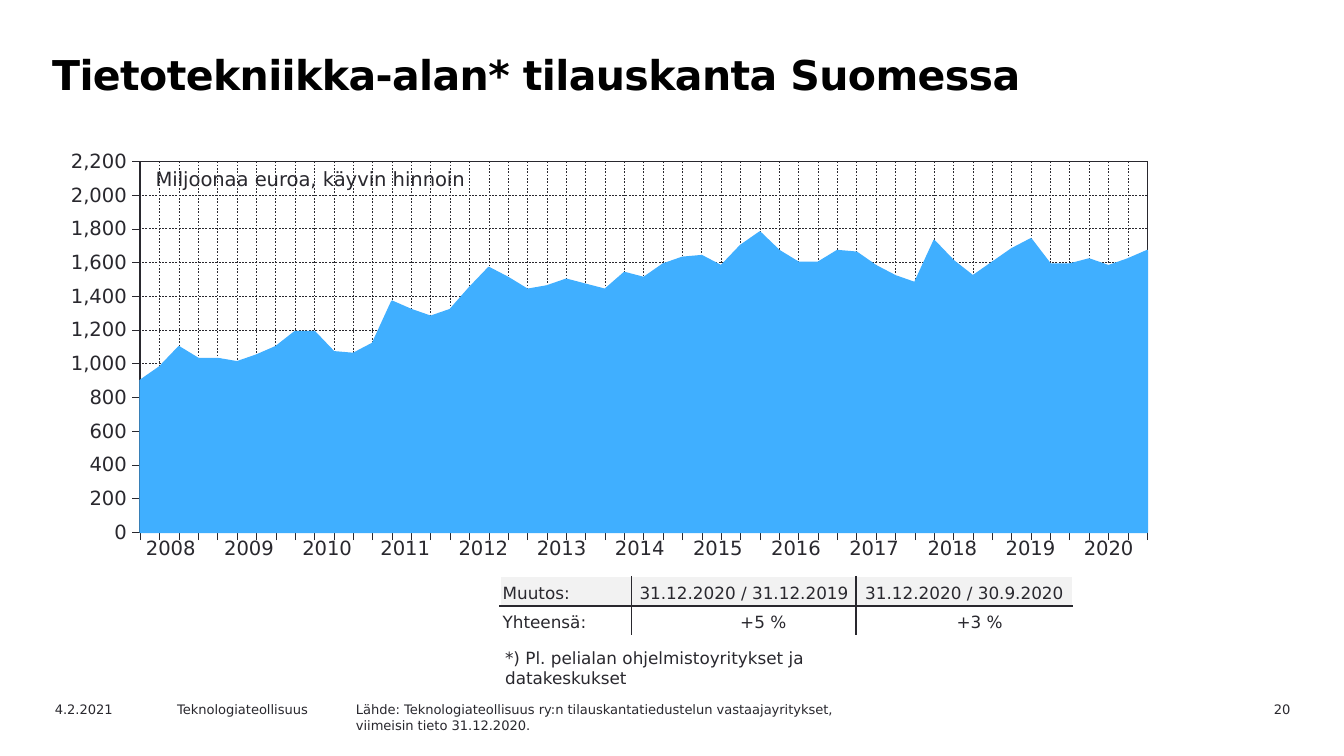
from lxml import etree
from pptx import Presentation
from pptx.chart.data import CategoryChartData
from pptx.dml.color import RGBColor
from pptx.enum.chart import XL_CHART_TYPE, XL_TICK_LABEL_POSITION, XL_TICK_MARK
from pptx.enum.dml import MSO_LINE
from pptx.enum.text import MSO_ANCHOR, PP_ALIGN
from pptx.oxml import parse_xml
from pptx.oxml.ns import nsdecls, qn
from pptx.util import Inches, Pt

AREA = XL_CHART_TYPE.AREA_STACKED
NO_LABELS = XL_TICK_LABEL_POSITION.NONE
OUT = XL_TICK_MARK.OUTSIDE
DASH = MSO_LINE.DASH
LEFT, MID, RIGHT = PP_ALIGN.LEFT, PP_ALIGN.CENTER, PP_ALIGN.RIGHT
TOP, BOTTOM = MSO_ANCHOR.TOP, MSO_ANCHOR.BOTTOM

FONT, INK, BLUE, WHITE, GREY = "DejaVu Sans", "29282E", "40AFFF", "FFFFFF", "F2F2F2"
PLAIN = "{2D5ABB26-0587-4C30-8999-92F81FD0307C}"  # table style without grid

# Content
TITLE = "Tietotekniikka-alan* tilauskanta Suomessa"
UNIT = "Miljoonaa euroa, käyvin hinnoin"
NOTE = "*) Pl. pelialan ohjelmistoyritykset ja datakeskukset"
FOOTER = [  # left, width, height, align, lines
    (8.76, 0.94, 0.18, RIGHT, ["20"]),
    (0.31, 1, 0.18, LEFT, ["4.2.2021"]),
    (1.22, 1.42, 0.18, LEFT, ["Teknologiateollisuus"]),
    (2.55, 5, 0.26, LEFT, [
        "Lähde: Teknologiateollisuus ry:n tilauskantatiedustelun vastaajayritykset,",
        "viimeisin tieto 31.12.2020."]),
]
ORDERS = [
    900, 980, 1100, 1030, 1030, 1010, 1050, 1100, 1190, 1190, 1070, 1060, 1120,
    1370, 1320, 1280, 1320, 1450, 1570, 1510, 1440, 1460, 1500, 1470, 1440,
    1540, 1510, 1590, 1630, 1640, 1580, 1700, 1780, 1670, 1600, 1600, 1670,
    1660, 1580, 1520, 1480, 1730, 1610, 1520, 1600, 1680, 1740, 1590, 1590,
    1620, 1580, 1620, 1670]
YEARS = [str(year) for year in range(2008, 2021)]
CHANGE = [
    ["Muutos:", "31.12.2020 / 31.12.2019", "31.12.2020 / 30.9.2020"],
    ["Yhteensä:", "+5 %", "+3 %"],
]
PLOT = {"x": 0.075, "y": 0.029, "w": 0.811, "h": 0.885}

prs = Presentation()
prs.slide_width = Inches(10)
prs.slide_height = Inches(10) * 9 // 16
slide = prs.slides.add_slide(prs.slide_layouts[6])


def rgb(color):
    return RGBColor.from_string(color)


def set_font(font, size, color=INK, bold=False):
    font.name, font.size, font.bold = FONT, Pt(size), bold
    font.color.rgb = rgb(color)


def set_line(line, color, width, dash=None):
    line.color.rgb = rgb(color)
    line.width = Pt(width)
    if dash:
        line.dash_style = dash


def add_text(left, top, width, height, lines, size, align=LEFT, wrap=True,
             color=INK, bold=False):
    box = slide.shapes.add_textbox(*map(Inches, (left, top, width, height)))
    frame = box.text_frame
    frame.word_wrap = wrap
    frame.text = "\n".join(lines)
    for para in frame.paragraphs:
        para.alignment = align
        set_font(para.font, size, color, bold)
    return frame.paragraphs[0]


def add_grid(left, top, widths, height, rows):
    size = map(Inches, (left, top, sum(widths), height * len(rows)))
    table = slide.shapes.add_table(len(rows), len(widths), *size).table
    table.first_row = table.horz_banding = False
    table._tbl.tblPr.find(qn("a:tableStyleId")).text = PLAIN
    for col, width in zip(table.columns, widths):
        col.width = Inches(width)
    for row in table.rows:
        row.height = Inches(height)
    return table


def fill_cell(cell, text, size, align, anchor, pads):
    cell.margin_left, cell.margin_top, cell.margin_right, cell.margin_bottom = map(Inches, pads)
    cell.vertical_anchor = anchor
    cell.text = text
    para = cell.text_frame.paragraphs[0]
    para.alignment = align
    set_font(para.font, size)


def add_edges(cell, edges):
    props = cell._tc.get_or_add_tcPr()
    for spot, (side, dark) in enumerate(edges):
        props.insert(spot, parse_xml(
            f'<a:ln{side} {nsdecls("a")} w="12700"><a:solidFill>'
            f'<a:srgbClr val="{INK if dark else WHITE}"/></a:solidFill></a:ln{side}>'))


# Title
head = add_text(0.29, 0.31, 8.74, 0.71, [TITLE], 22, color="000000", bold=True)
head.line_spacing = Pt(27)
head.runs[0].font._element.set("spc", "-30")

# Footer
for left, width, height, align, lines in FOOTER:
    add_text(left, 5.17, width, height, lines, 7, align)

# Area chart, one point per quarter
data = CategoryChartData()
data.categories = [str(i + 1) for i in range(len(ORDERS))]
data.add_series("Series 1", ORDERS)
place = map(Inches, (0.35, 1.11, 9.24, 3.12))
chart = slide.shapes.add_chart(AREA, *place, data).chart
chart.has_legend = chart.has_title = False
set_font(chart.font, 10.5)
area = chart.plots[0]
area.vary_by_categories = False
series = area.series[0]
series.format.fill.solid()
series.format.fill.fore_color.rgb = rgb(BLUE)
set_line(series.format.line, BLUE, 0.88)

cats, vals = chart.category_axis, chart.value_axis
for axis in (cats, vals):
    axis.major_tick_mark = OUT
    axis.has_major_gridlines = True
    set_line(axis.format.line, INK, 0.22)
    set_line(axis.major_gridlines.format.line, INK, 0.25, DASH)
cats.tick_label_position = NO_LABELS
vals.minimum_scale, vals.maximum_scale, vals.major_unit = 0, 2200, 200
vals.tick_labels.number_format = "#,##0"
vals.tick_labels.number_format_is_linked = False
set_font(vals.tick_labels.font, 10.5)
vals._element.find(qn("c:crossBetween")).set("val", "midCat")

# Plot position and frame
plot = chart._chartSpace.chart.plotArea
old = plot.find(qn("c:layout"))
if old is not None:
    plot.remove(old)
layout = etree.Element(qn("c:layout"))
manual = etree.SubElement(layout, qn("c:manualLayout"))
marks = {"layoutTarget": "inner", "xMode": "edge", "yMode": "edge", **PLOT}
for tag, val in marks.items():
    etree.SubElement(manual, qn(f"c:{tag}")).set("val", str(val))
plot.insert(0, layout)
plot.append(parse_xml(
    f'<c:spPr {nsdecls("c", "a")}><a:noFill/><a:ln w="9525"><a:solidFill>'
    f'<a:srgbClr val="{INK}"/></a:solidFill></a:ln></c:spPr>'))

add_text(1.06, 1.19, 2.6, 0.27, [UNIT], 10.5, wrap=False)

# Change table
table = add_grid(3.72, 4.29, [0.98, 1.67, 1.61], 0.22, CHANGE)
for r, row in enumerate(CHANGE):
    for c, text in enumerate(row):
        cell = table.cell(r, c)
        value = r > 0 and c > 0
        align = RIGHT if value else MID if c else LEFT
        pads = (0.02, 0.02, 0.52 if value else 0.02, 0.02)
        fill_cell(cell, text, 9, align, BOTTOM, pads)
        cell.fill.solid()
        cell.fill.fore_color.rgb = rgb(WHITE if r else GREY)
        add_edges(cell, [("L", c > 0), ("R", c < 2), ("T", r > 0), ("B", r == 0)])

add_text(3.66, 4.77, 2.61, 0.4, [NOTE], 9)

# Year labels under the chart
table = add_grid(0.98, 3.95, [7.56 / len(YEARS)] * len(YEARS), 0.31, [YEARS])
for c, year in enumerate(YEARS):
    cell = table.cell(0, c)
    fill_cell(cell, year, 10.5, MID, TOP, (0.1, 0.05, 0.1, 0.05))
    cell.fill.background()

prs.save("out.pptx")
